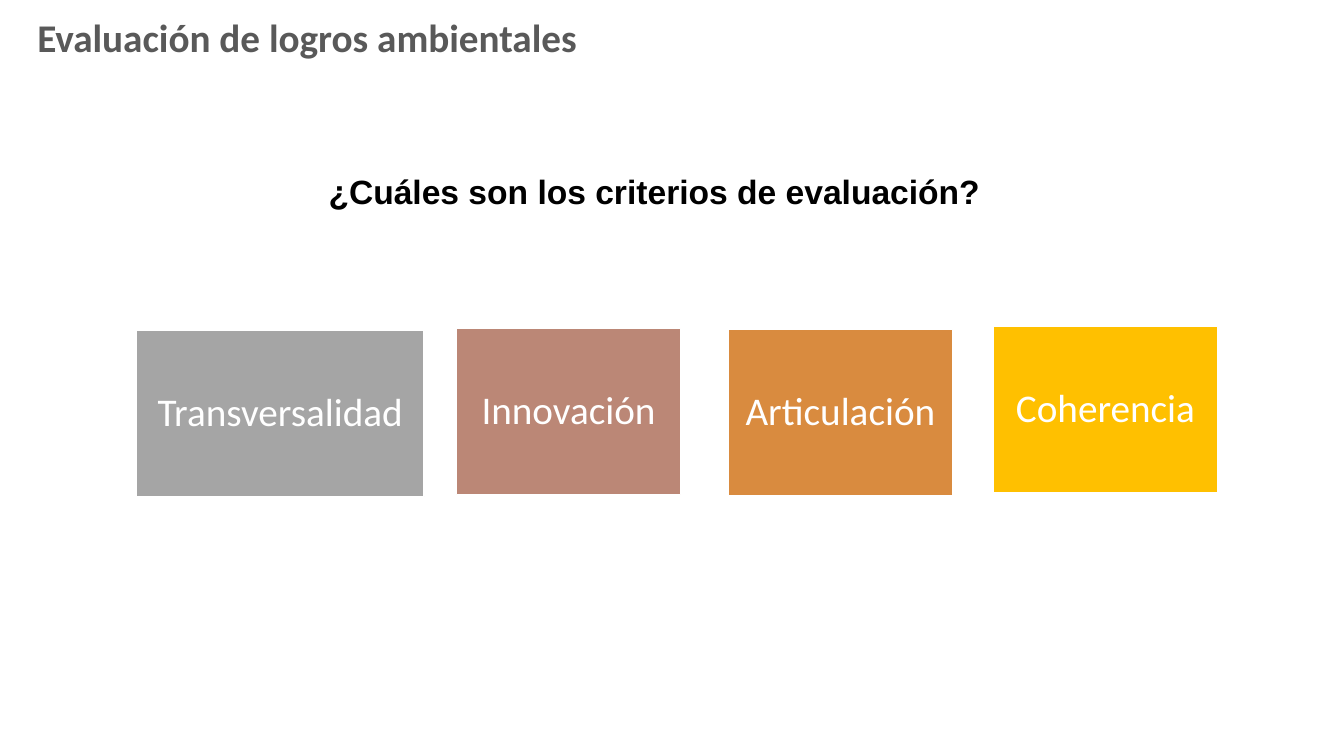
from pptx import Presentation
from pptx.dml.color import RGBColor
from pptx.enum.shapes import MSO_SHAPE
from pptx.enum.text import MSO_ANCHOR, PP_ALIGN
from pptx.util import Cm, Pt

RECT = MSO_SHAPE.RECTANGLE
TOP, MIDDLE = MSO_ANCHOR.TOP, MSO_ANCHOR.MIDDLE
LEFT, CENTER = PP_ALIGN.LEFT, PP_ALIGN.CENTER

TITLE = "Evaluación de logros ambientales"
QUESTION = "¿Cuáles son los criterios de evaluación?"
CRITERIA = [
    ("Transversalidad", "A5A5A5", 3.43, 8.33, 7.26),
    ("Innovación", "BB8776", 11.51, 8.28, 5.64),
    ("Articulación", "D98B3F", 18.36, 8.31, 5.64),
    ("Coherencia", "FFC000", 25.04, 8.23, 5.64),
]
CARD_HEIGHT = 4.19
CARD_INSET = 0.3

THEME = {
    "title": {"font": "Calibri", "size": 28, "color": "595959", "bold": True},
    "question": {"font": "Arial", "size": 24, "color": "000000", "bold": True},
    "card": {"font": "Calibri", "size": 28, "color": "FFFFFF", "bold": False},
    "outline": "FFFFFF",
}


def write(s, text, style, anchor=TOP, align=LEFT, spacing=1.0):
    tf = s.text_frame
    tf.text = text
    tf.word_wrap = True
    tf.vertical_anchor = anchor
    p = tf.paragraphs[0]
    p.alignment = align
    p.line_spacing = spacing
    r = p.runs[0]
    r.font.name = style["font"]
    r.font.size = Pt(style["size"])
    r.font.bold = style["bold"]
    r.font.color.rgb = RGBColor.from_string(style["color"])


def add_card(slide, name, color, left, top, width):
    s = slide.shapes.add_shape(RECT, Cm(left), Cm(top), Cm(width), Cm(CARD_HEIGHT))
    s.shadow.inherit = False
    s.fill.solid()
    s.fill.fore_color.rgb = RGBColor.from_string(color)
    s.line.color.rgb = RGBColor.from_string(THEME["outline"])
    s.line.width = Pt(1)
    tf = s.text_frame
    tf.margin_left = tf.margin_right = Cm(CARD_INSET)
    tf.margin_top = tf.margin_bottom = Cm(CARD_INSET)
    write(s, name, THEME["card"], MIDDLE, CENTER, 0.9)


def main():
    prs = Presentation()
    prs.slide_width, prs.slide_height = Cm(33.87), Cm(19.05)
    slide = prs.slides.add_slide(prs.slide_layouts[6])

    title = slide.shapes.add_textbox(Cm(0.69), Cm(0.43), Cm(29.21), Cm(1.17))
    write(title, TITLE, THEME["title"], MIDDLE, spacing=0.9)

    question = slide.shapes.add_textbox(Cm(8.03), Cm(4.17), Cm(19.99), Cm(1.27))
    write(question, QUESTION, THEME["question"])

    for criterion in CRITERIA:
        add_card(slide, *criterion)

    prs.save("out.pptx")


if __name__ == "__main__":
    main()
